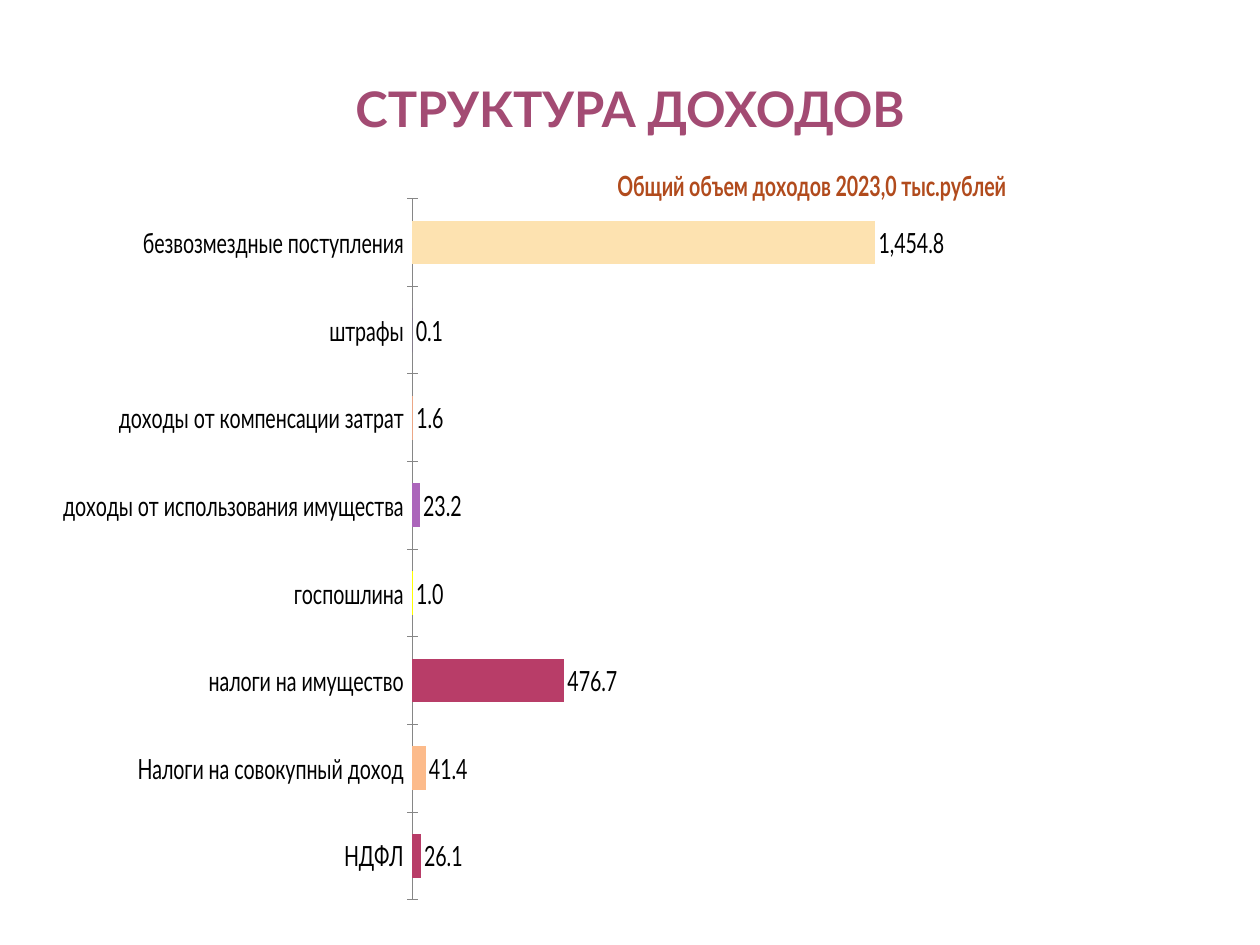
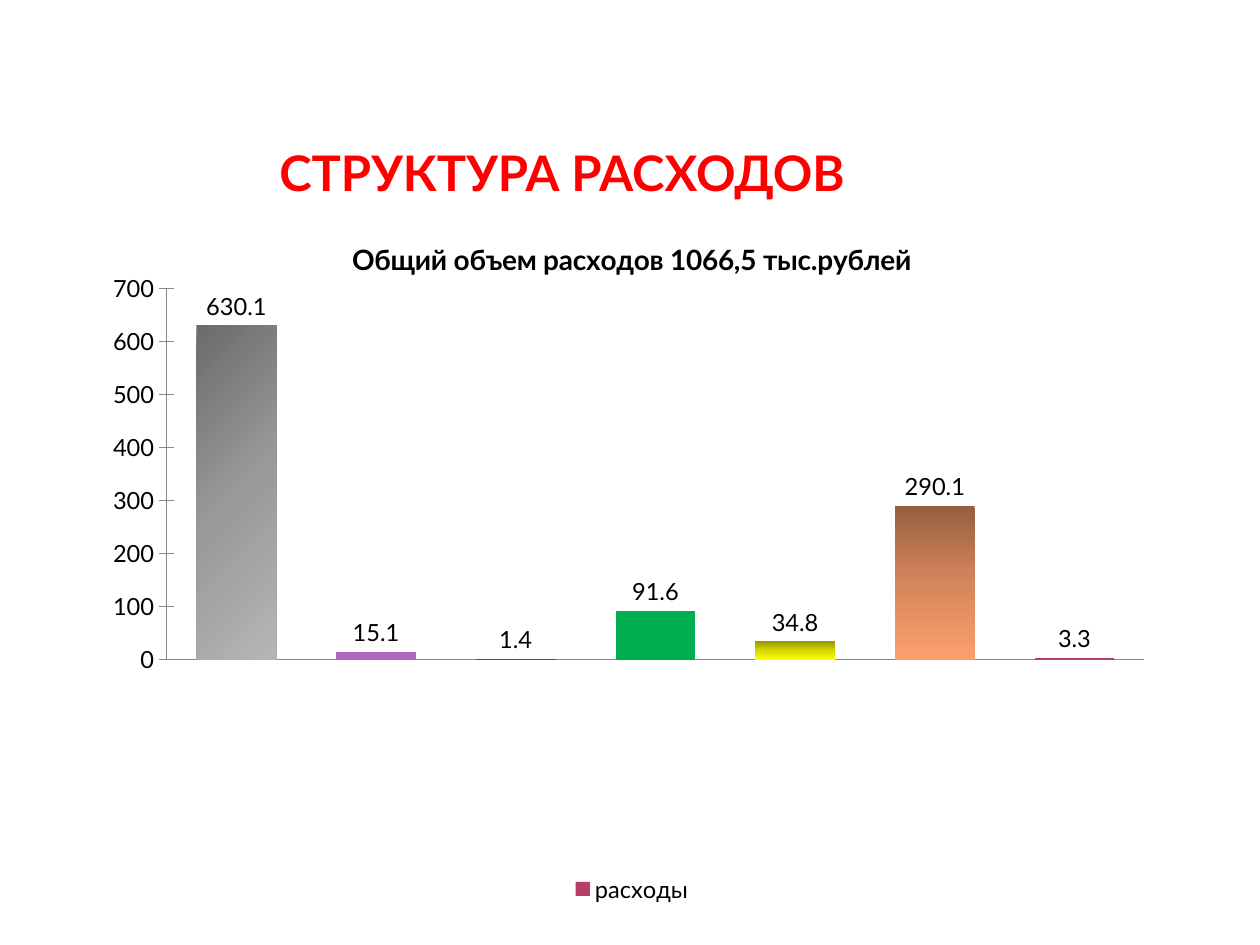
from dataclasses import dataclass
from typing import Optional, Union

from pptx import Presentation
from pptx.chart.data import CategoryChartData
from pptx.dml.color import RGBColor
from pptx.enum.chart import XL_CHART_TYPE as CT, XL_LABEL_POSITION as LP
from pptx.enum.chart import XL_LEGEND_POSITION, XL_TICK_LABEL_POSITION as TLP
from pptx.enum.chart import XL_TICK_MARK as TM
from pptx.enum.text import MSO_ANCHOR, PP_ALIGN
from pptx.oxml import parse_xml
from pptx.oxml.ns import nsdecls
from pptx.util import Pt

FONT = "Lato"
BLACK, AXIS_GREY, SERIES_COLOR = "000000", "868686", "B83D68"


@dataclass
class Box:
    left: float
    top: float
    width: float
    height: float

    def emu(self) -> tuple:
        return tuple(Pt(v) for v in (self.left, self.top, self.width, self.height))


@dataclass
class Gradient:
    stops: list[tuple[int, str]]  # percent, colour
    angle: int  # clockwise, degrees


@dataclass
class Bar:
    category: str
    value: float
    fill: Union[str, Gradient] = SERIES_COLOR


@dataclass
class BarChart:
    kind: int
    box: Box
    series_name: str
    bars: list[Bar]
    title: str
    title_color: str
    title_size: float
    size: float
    gap: int
    plot: tuple[float, float, float, float]  # share of the chart's box
    number_format: str


def rgb(value: str) -> RGBColor:
    return RGBColor.from_string(value)


def set_font(font, size: float, color: str = BLACK, bold: bool = False) -> None:
    font.name, font.size, font.bold = FONT, Pt(size), bold
    font.color.rgb = rgb(color)


def add_title(slide, text: str, box: Box, color: str) -> None:
    tf = slide.shapes.add_textbox(*box.emu()).text_frame
    tf.word_wrap = True
    tf.vertical_anchor = MSO_ANCHOR.BOTTOM
    tf.margin_left = tf.margin_right = Pt(3.6)
    tf.margin_top = tf.margin_bottom = 0
    p = tf.paragraphs[0]
    p.text, p.alignment = text, PP_ALIGN.CENTER
    set_font(p.font, 28, color, True)


def fill_bar(series, index: int, fill: Union[str, Gradient]) -> None:
    target = series.points[index].format.fill
    if isinstance(fill, str):
        target.solid()
        target.fore_color.rgb = rgb(fill)
        return
    target.gradient()
    target.gradient_angle = 360 - fill.angle
    # Points are filled in order, so the newest stop list is the last one
    stop_list = series._element.xpath(".//a:gsLst")[-1]
    stop_list.clear()
    for percent, color in fill.stops:
        stop_list.append(parse_xml(
            f'<a:gs {nsdecls("a")} pos="{percent * 1000}"><a:srgbClr val="{color}"/></a:gs>'))


def set_plot_area(chart, plot: tuple[float, float, float, float]) -> None:
    area = chart._chartSpace.chart.plotArea
    for old in area.xpath("c:layout"):
        area.remove(old)
    sizes = "".join(f'<c:{k} val="{v}"/>' for k, v in zip("xywh", plot))
    area.insert(0, parse_xml(
        f'<c:layout {nsdecls("c")}><c:manualLayout><c:layoutTarget val="inner"/>'
        f'<c:xMode val="edge"/><c:yMode val="edge"/>{sizes}</c:manualLayout></c:layout>'))


def add_bar_chart(slide, spec_: BarChart):
    data = CategoryChartData()
    data.categories = [b.category for b in spec_.bars]
    data.add_series(spec_.series_name, [b.value for b in spec_.bars])
    chart = slide.shapes.add_chart(spec_.kind, *spec_.box.emu(), data).chart
    set_font(chart.font, spec_.size)
    set_plot_area(chart, spec_.plot)
    chart.has_legend = False

    # Heading
    chart.has_title = True
    p = chart.chart_title.text_frame.paragraphs[0]
    p.text = spec_.title
    set_font(p.font, spec_.title_size, spec_.title_color, True)
    chart.chart_title.include_in_layout = False

    # Axes
    for axis in (chart.category_axis, chart.value_axis):
        axis.has_major_gridlines = False
        axis.major_tick_mark, axis.minor_tick_mark = TM.OUTSIDE, TM.NONE
        axis.format.line.color.rgb = rgb(AXIS_GREY)
        axis.format.line.width = Pt(0.75)
    chart.value_axis.minimum_scale = 0
    chart.value_axis.major_unit = 100

    # Bars and their values
    plot = chart.plots[0]
    plot.vary_by_categories, plot.gap_width = False, spec_.gap
    series = plot.series[0]
    series.invert_if_negative = False
    series.format.fill.solid()
    series.format.fill.fore_color.rgb = rgb(SERIES_COLOR)
    for i, bar in enumerate(spec_.bars):
        if bar.fill != SERIES_COLOR:
            fill_bar(series, i, bar.fill)
    plot.has_data_labels = True
    labels = plot.data_labels
    labels.show_value, labels.position = True, LP.OUTSIDE_END
    labels.number_format, labels.number_format_is_linked = spec_.number_format, False
    set_font(labels.font, spec_.size)
    return chart


INCOME = BarChart(
    CT.BAR_CLUSTERED, Box(36, 78.5, 661.7, 461.5), "Series 1",
    [
        Bar("НДФЛ", 26.1),
        Bar("Налоги на совокупный доход", 41.4, "FCBB8B"),
        Bar("налоги на имущество", 476.7),
        Bar("госпошлина", 1, "FFFF00"),
        Bar("доходы от использования имущества", 23.2, "AC66BB"),
        Bar("доходы от компенсации затрат", 1.6, "EBA786"),
        Bar("штрафы", 0.1, "7030A0"),
        Bar("безвозмездные поступления", 1454.8, "FDE2B0"),
    ],
    "Общий объем доходов 2023,0 тыс.рублей", "B14B1D", 15.9, 15.9, 100,
    (0.012, 0.076, 0.622, 0.868), "#,##0.0")

EXPENSES = BarChart(
    CT.COLUMN_CLUSTERED, Box(24.5, 122.4, 673.2, 396.7), "расходы",
    [
        Bar("1", 630.1, Gradient([(0, "6B6B6B"), (50, "999999"), (100, "B5B5B5")], 45)),
        Bar("2", 15.1, "AC66BB"),
        Bar("3", 1.4, "0070C0"),
        Bar("4", 91.6, "00B050"),
        Bar("5", 34.8, Gradient([(0, "979700"), (50, "D7D700"), (100, "FFFF00")], 90)),
        Bar("6", 290.1, Gradient([(0, "965E40"), (50, "D5865C"), (100, "FC9F6D")], 90)),
        Bar("7", 3.3),
    ],
    "Общий объем расходов 1066,5 тыс.рублей", BLACK, 16, 13.5, 75,
    (0.105, 0.107, 0.83, 0.535), "General")


def add_chart_slide(prs, title: str, box: Box, color: str, content: BarChart):
    slide = prs.slides.add_slide(prs.slide_layouts[6])
    add_title(slide, title, box, color)
    return add_bar_chart(slide, content)


def main() -> None:
    prs = Presentation()
    prs.slide_width, prs.slide_height = Pt(720), Pt(540)

    # Income: values stand beside the bars, so the value axis is off
    chart = add_chart_slide(prs, "СТРУКТУРА ДОХОДОВ", Box(36, 21.6, 648, 56.9), "A34B73", INCOME)
    chart.category_axis.major_tick_mark = TM.CROSS
    chart.value_axis.maximum_scale = 1600
    chart.value_axis.visible = False

    # Expenses: unlabelled categories and a legend
    chart = add_chart_slide(prs, "СТРУКТУРА РАСХОДОВ", Box(36, 25.2, 570.2, 90), "FF0000", EXPENSES)
    chart.category_axis.tick_label_position = TLP.NONE
    chart.category_axis.major_tick_mark = TM.NONE
    chart.value_axis.major_tick_mark = TM.CROSS
    chart.has_legend = True
    chart.legend.position = XL_LEGEND_POSITION.BOTTOM
    chart.legend.include_in_layout = False
    set_font(chart.legend.font, EXPENSES.size)

    prs.save("out.pptx")


if __name__ == "__main__":
    main()
